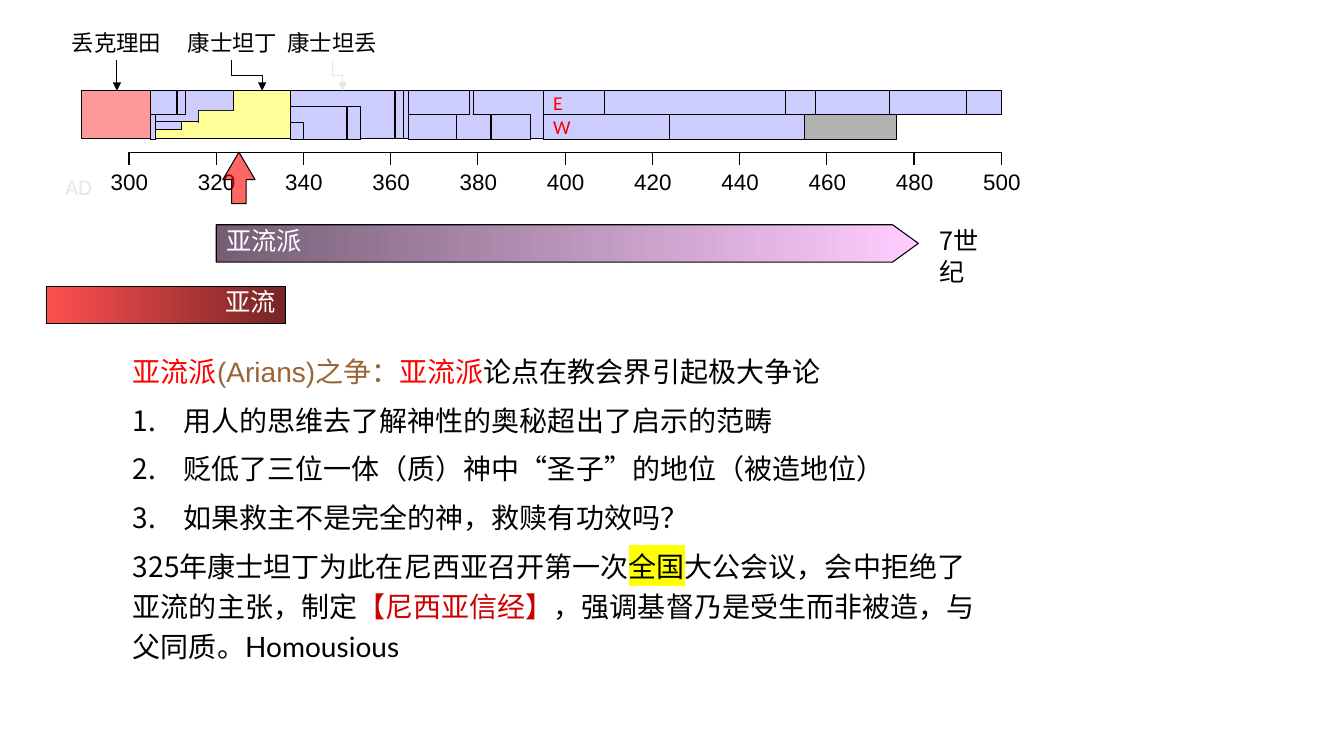
from dataclasses import dataclass
from lxml import etree
from pptx import Presentation
from pptx import util as u
from pptx.dml import color
from pptx.enum import shapes, text
from pptx.oxml import ns


@dataclass(frozen=True)
class Theme:
    black: str = "000000"
    white: str = "FFFFFF"
    pale: str = "E7E6E6"
    reign: str = "CCCCFF"
    constantine: str = "FFFF99"
    diocletian: str = "FF9999"
    fallen: str = "B2B2B2"
    red: str = "FF0000"
    creed: str = "CC0000"
    brown: str = "996633"
    marker: str = "FFFF00"
    arians: tuple = ("755E75", "FFCCFF")
    arius: tuple = ("FF5050", "762525")
    small: int = 14
    label: int = 16
    band: int = 18
    body: int = 20
    latin: str = "Calibri"
    axis: str = "Arial"
    chinese: str = "Noto Sans CJK SC"
    closing: str = "Lato"


theme = Theme()
Inches = u.Inches
rgb = color.RGBColor.from_string
LEFT, CENTER, RIGHT = text.PP_ALIGN.LEFT, text.PP_ALIGN.CENTER, text.PP_ALIGN.RIGHT


def write(frame, paragraphs, size=theme.label, font=theme.latin, ink=theme.black, align=LEFT,
          middle=False, spacing=None, after=None, side=0.1):
    frame.word_wrap = True
    frame.margin_left = frame.margin_right = Inches(side)
    frame.vertical_anchor = text.MSO_ANCHOR.MIDDLE if middle else text.MSO_ANCHOR.TOP
    for index, pieces in enumerate(paragraphs):
        line = frame.add_paragraph() if index else frame.paragraphs[0]
        line.alignment, line.line_spacing = align, spacing
        if after:
            line.space_after = u.Pt(after)
        for piece in [(pieces, {})] if isinstance(pieces, str) else pieces:
            wording, own = piece
            run = line.add_run()
            run.text = wording
            run.font.size = u.Pt(size)
            run.font.color.rgb = rgb(own.get("ink", ink))
            run.font.name = own.get("font", font)
            props = run.font._element
            etree.SubElement(props, ns.qn("a:ea")).set("typeface", theme.chinese)
            if "marker" in own:
                mark = etree.Element(ns.qn("a:highlight"))
                etree.SubElement(mark, ns.qn("a:srgbClr")).set("val", own["marker"])
                props.find(ns.qn("a:solidFill")).addnext(mark)


def block(start, end, top, height, fill, kind=shapes.MSO_SHAPE.RECTANGLE, outlined=True):
    left, right = (1.28 + (year - 300) * 0.04325 for year in (start, end))
    part = slide.shapes.add_shape(kind, Inches(left), Inches(top), Inches(right - left), Inches(height))
    part.shadow.inherit = False
    if isinstance(fill, tuple):
        part.fill.gradient()
        part.fill.gradient_angle = 0
        for stop, shade in zip(part.fill.gradient_stops, fill):
            stop.color.rgb = rgb(shade)
    else:
        part.fill.solid()
        part.fill.fore_color.rgb = rgb(fill)
    if outlined:
        part.line.color.rgb = rgb(theme.black)
        part.line.width = u.Pt(0.75)
    else:
        part.line.fill.background()
    return part


deck = Presentation()
deck.slide_width, deck.slide_height = Inches(13.33), Inches(7.5)
slide = deck.slides.add_slide(deck.slide_layouts[6])

for left, top, width, height, years, edges, edge_ink in [
    (1.28, 1.51, 8.65, 0.4, [""] * 10, ("lnL", "lnR", "lnT", "lnB"), theme.black),
    (0.85, 1.64, 9.52, 0.37, range(300, 501, 20), ("lnT", "lnB"), theme.white),
]:
    scale = slide.shapes.add_table(1, len(years), Inches(left), Inches(top), Inches(width), Inches(height)).table
    scale.first_row = scale.horz_banding = False
    for column, year in enumerate(years):
        scale.columns[column].width = Inches(width / len(years))
        cell = scale.cell(0, column)
        cell.fill.solid()
        cell.fill.fore_color.rgb = rgb(theme.white)
        if year:
            write(cell.text_frame, [str(year)], font=theme.axis, align=CENTER)
        for position, edge in enumerate(edges):
            border = etree.Element(ns.qn("a:" + edge), w=str(u.Pt(1)))
            paint = etree.SubElement(border, ns.qn("a:solidFill"))
            etree.SubElement(paint, ns.qn("a:srgbClr")).set("val", edge_ink)
            cell._tc.get_or_add_tcPr().insert(position, border)

TOP, LOW, HALF, FULL = 0.9, 1.14, 0.24, 0.47
reigns = [
    (455, 476, LOW, HALF, theme.fallen),
    (424, 455, LOW, HALF), (305, 306, LOW, HALF),
    (289, 305, TOP, FULL, theme.diocletian),
    (337, 361, TOP, FULL), (361, 363, TOP, FULL), (363, 364, TOP, FULL),
    (395, 424, LOW, HALF),
    (306, 337, TOP, FULL, theme.constantine),
    (306, 312, 1.21, 0.08), (306, 324, TOP, 0.31), (311, 313, TOP, HALF), (305, 311, TOP, HALF),
    (395, 409, TOP, HALF), (409, 450.5, TOP, HALF), (450.5, 457.5, TOP, HALF),
    (457.5, 474.5, TOP, HALF), (474.5, 492, TOP, HALF), (492, 500, TOP, HALF),
    (316, 324, 1.1, 0.12, theme.constantine),
    (364, 378, TOP, HALF), (364, 375, LOW, HALF), (379, 395, TOP, FULL),
    (375, 383, LOW, HALF), (378, 379, TOP, HALF), (383, 392, LOW, HALF),
    (337, 350, 1.06, 0.32), (350, 353, 1.06, 0.32), (337, 340, 1.22, 0.16),
]
halves = {(395, TOP): "E", (395, LOW): "W"}
for start, end, top, height, *fill in reigns:
    reign = block(start, end, top, height, fill[0] if fill else theme.reign)
    if (start, top) in halves:
        write(reign.text_frame, [halves[start, top]], size=theme.small, ink=theme.red, middle=True)
block(316, 324.2, 1.1, 0.12, theme.constantine, outlined=False)
block(378.2, 378.8, 1.07, 0.08, theme.reign, outlined=False)

for emperor, left, start, end, ink in [
    ("丢克理田", 0.71, 1.16, 1.16, theme.black),
    ("康士坦丁", 1.86, 2.3, 2.6, theme.black),
    ("康士坦丢", 2.85, 3.3, 3.4, theme.pale),
]:
    name = slide.shapes.add_textbox(Inches(left), Inches(0.25), Inches(0.89), Inches(0.35))
    write(name.text_frame, [emperor], align=CENTER, middle=True, side=0)
    name.text_frame.word_wrap = False
    bent = start != end
    across, down = ((0.15, (end - start) / 2) if bent else (0, 0.15))
    middle = (start + end) / 2
    pointer = slide.shapes.add_connector(
        shapes.MSO_CONNECTOR.ELBOW if bent else shapes.MSO_CONNECTOR.STRAIGHT,
        Inches(middle - across), Inches(0.75 - down), Inches(middle + across), Inches(0.75 + down))
    pointer.line.color.rgb = rgb(ink)
    pointer.line.width = u.Pt(0.75)
    if bent:
        turn = pointer._element.spPr.find(ns.qn("a:xfrm"))
        turn.set("rot", "16200000")
        turn.set("flipH", "1")
    etree.SubElement(pointer.line._get_or_add_ln(), ns.qn("a:tailEnd")).set("type", "triangle")
    etree.SubElement(pointer._element.spPr, ns.qn("a:effectLst"))

arians = block(320, 481, 2.23, 0.37, theme.arians, shapes.MSO_SHAPE.PENTAGON)
arians.adjustments[0] = 0.69
write(arians.text_frame, ["亚流派"], size=theme.band, ink=theme.white, spacing=0.85)
arius = block(281, 336, 2.84, 0.37, theme.arius)
write(arius.text_frame, ["亚流"], size=theme.band, ink=theme.white, align=RIGHT, spacing=0.85)

council = block(321.5, 328.9, 1.51, 0.51, theme.red, shapes.MSO_SHAPE.UP_ARROW)
council.adjustments[0], council.adjustments[1] = 0.45, 0.85
tint = council._element.spPr.find(ns.qn("a:solidFill"))[0]
etree.SubElement(tint, ns.qn("a:alpha")).set("val", "60000")

era = slide.shapes.add_textbox(Inches(0.55), Inches(1.67), Inches(0.5), Inches(0.36))
write(era.text_frame, ["AD"], ink=theme.pale, middle=True)
century = slide.shapes.add_textbox(Inches(9.22), Inches(2.19), Inches(0.83), Inches(0.4))
write(century.text_frame, ["7世纪"], size=theme.band, font=theme.chinese)

dispute = slide.shapes.add_textbox(Inches(1.22), Inches(3.4), Inches(8.63), Inches(3.78))
write(dispute.text_frame, [
    [("亚流派", {"ink": theme.red}), ("(Arians)", {"ink": theme.brown, "font": theme.axis}),
     ("之争：", {"ink": theme.brown}), ("亚流派", {"ink": theme.red}), ("论点在教会界引起极大争论", {})],
    "用人的思维去了解神性的奥秘超出了启示的范畴",
    "贬低了三位一体（质）神中“圣子”的地位（被造地位）",
    "如果救主不是完全的神，救赎有功效吗？",
    [("325年康士坦丁为此在尼西亚召开第一次", {}), ("全国", {"marker": theme.marker}),
     ("大公会议，会中拒绝了亚流的主张，制定", {}), ("【尼西亚信经】", {"ink": theme.creed}),
     ("，强调基督乃是受生而非被造，与父同质。", {}), ("Homousious", {"font": theme.closing})],
], size=theme.body, font=theme.chinese, spacing=1.2, after=6)
for objection in dispute.text_frame.paragraphs[1:4]:
    layout = objection._p.get_or_add_pPr()
    layout.set("marL", str(Inches(0.5)))
    layout.set("indent", str(-Inches(0.5)))
    etree.SubElement(layout, ns.qn("a:buAutoNum")).set("type", "arabicPeriod")

deck.save("out.pptx")
